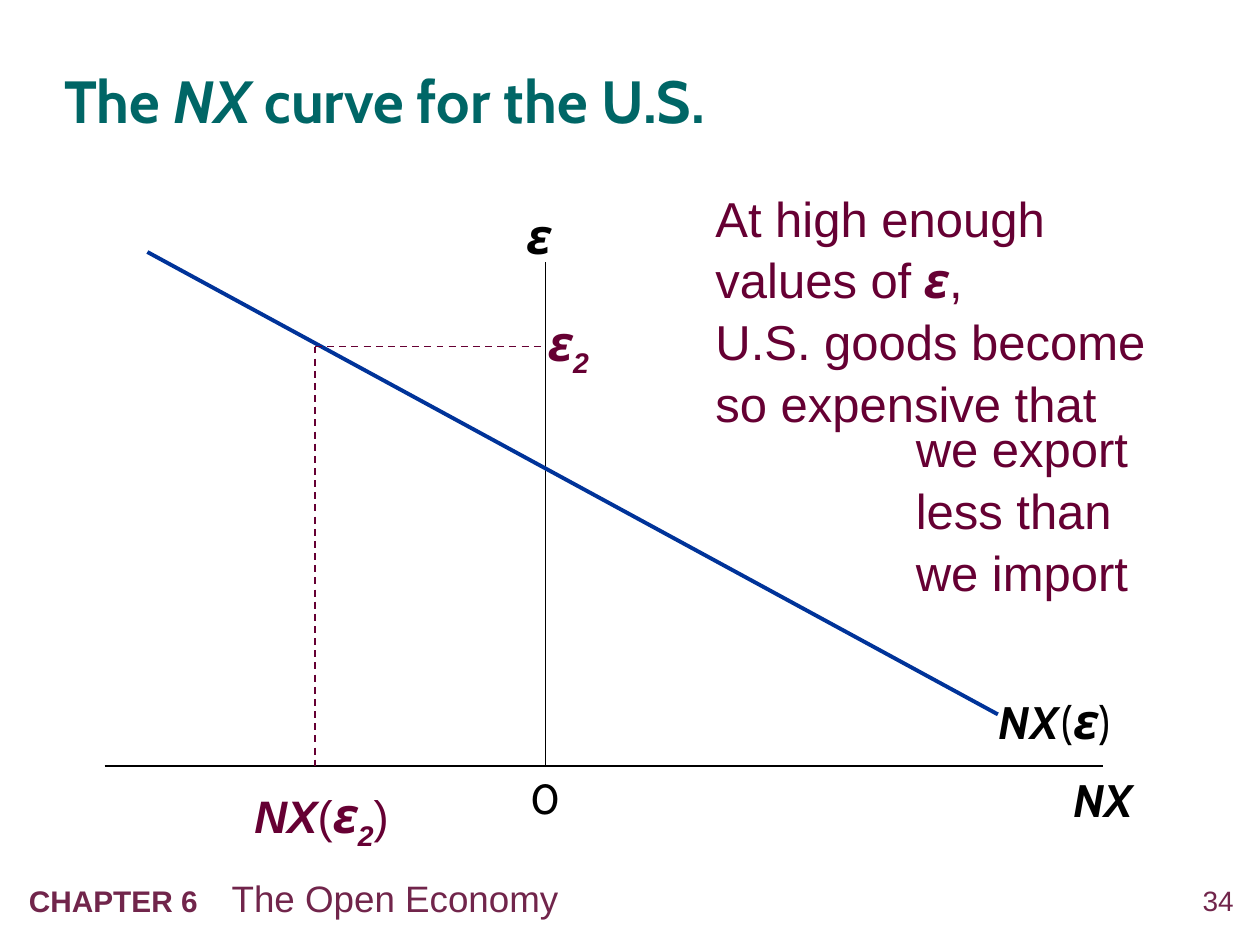
from lxml.etree import SubElement
from pptx import Presentation
from pptx.dml.color import RGBColor
from pptx.enum.dml import MSO_LINE
from pptx.enum.shapes import MSO_CONNECTOR
from pptx.enum.text import MSO_ANCHOR, MSO_AUTO_SIZE, PP_ALIGN
from pptx.oxml.ns import qn
from pptx.util import Inches, Pt

BLACK, PLUM, FOOTER, TEAL, BLUE = "000000", "660033", "71254B", "006666", "003399"

# Formats for the parts of the mathematical labels
VARIABLE = {"size": 26, "name": "Cabin", "bold": True, "italic": True}
EPSILON = {**VARIABLE, "size": 28}
BRACKET = {"size": 26, "name": "Cabin"}
BODY = {"size": 28, "name": "Arial"}
SUBSCRIPT = {**EPSILON, "name": "Arial", "baseline": -25}


def rgb(hex_color):
    return RGBColor.from_string(hex_color)


class DiagramSlide:
    def __init__(self, slide):
        self.slide = slide

    def add_runs(self, paragraph, runs, color):
        """Add (text, format) runs; a newline in a text becomes a line break."""
        for text, style in runs:
            for number, line in enumerate(text.split("\n")):
                if number:
                    paragraph.add_line_break()
                run = paragraph.add_run()
                run.text = line
                run.font.color.rgb = rgb(color)
                for key, value in style.items():
                    if key == "baseline":
                        run.font._element.set("baseline", str(value * 1000))
                    else:
                        setattr(run.font, key, Pt(value) if key == "size" else value)

    def title(self, box, runs, color):
        title = self.slide.shapes.title
        title.left, title.top, title.width, title.height = map(Inches, box)
        self.set_frame(title.text_frame, margin=0, vertical_anchor=MSO_ANCHOR.MIDDLE,
                       auto_size=MSO_AUTO_SIZE.NONE)
        paragraph = title.text_frame.paragraphs[0]
        paragraph.alignment = PP_ALIGN.LEFT
        paragraph.line_spacing = 1.05
        self.add_runs(paragraph, runs, color)

    def set_frame(self, frame, margin=None, **settings):
        frame.word_wrap = True
        if margin is not None:
            for side in ("left", "right", "top", "bottom"):
                settings[f"margin_{side}"] = Inches(margin)
        for key, value in settings.items():
            setattr(frame, key, value)

    def text(self, box, runs, color=BLACK, margin=None, tab=None, **paragraph_format):
        frame = self.slide.shapes.add_textbox(*map(Inches, box)).text_frame
        self.set_frame(frame, margin)
        paragraph = frame.paragraphs[0]
        for key, value in paragraph_format.items():
            setattr(paragraph, key, value)
        if tab is not None:
            stops = SubElement(paragraph._p.get_or_add_pPr(), qn("a:tabLst"))
            SubElement(stops, qn("a:tab"), pos=str(Inches(tab)), algn="l")
        self.add_runs(paragraph, runs, color)

    def line(self, start, end, color=BLACK, width=1, dash=None):
        connector = self.slide.shapes.add_connector(
            MSO_CONNECTOR.STRAIGHT, *map(Inches, start + end))
        connector.line.color.rgb = rgb(color)
        connector.line.width = Pt(width)
        if dash:
            connector.line.dash_style = dash
        SubElement(connector._element.spPr, qn("a:effectLst"))


def main():
    presentation = Presentation()
    presentation.slide_width, presentation.slide_height = Inches(10), Inches(7.5)
    layout = presentation.slide_layouts.get_by_name("Title Only")
    diagram = DiagramSlide(presentation.slides.add_slide(layout))

    heading = {"size": 34, "name": "Cabin", "bold": True, "italic": False}
    diagram.title((0.51, 0.26, 9.02, 1.03),
                  [("The ", heading), ("NX", {**heading, "italic": True}),
                   (" curve for the U.S.", heading)], TEAL)
    diagram.text((9.24, 7.01, 0.55, 0.32), [("34", {"size": 16, "name": "Arial"})],
                 FOOTER, margin=0, alignment=PP_ALIGN.RIGHT)
    diagram.text((0.13, 6.9, 8.18, 0.45),
                 [("CHAPTER 6", {"size": 17, "name": "Arial", "bold": True}),
                  ("\tThe Open Economy", {"size": 21, "name": "Arial"})],
                 FOOTER, tab=1.61)

    # Axes
    zero_x, axis_y = 4.33, 6.08
    diagram.line((0.83, axis_y), (8.75, axis_y))
    diagram.line((zero_x, 2.08), (zero_x, axis_y))
    diagram.text((4.11, axis_y, 0.5, 0.5), [("0", {"size": 24, "name": "Cabin"})])
    diagram.text((8.42, axis_y, 0.75, 0.53), [("NX", VARIABLE)])
    diagram.text((4.08, 1.58, 0.5, 0.57), [("ε", EPSILON)])

    # Net exports curve
    diagram.line((1.17, 2), (7.92, 5.67), BLUE, 2.25)
    diagram.text((7.83, 5.43, 1.25, 0.57),
                 [("NX", VARIABLE), (" ", {**VARIABLE, "size": 8}), ("(", BRACKET),
                  ("ε", EPSILON), (")", BRACKET)])

    # High exchange rate and the trade deficit it causes
    deficit_x, rate_y = 2.5, 2.75
    for end in ((zero_x, rate_y), (deficit_x, axis_y)):
        diagram.line((deficit_x, rate_y), end, PLUM, dash=MSO_LINE.DASH)
    rate = [("ε", EPSILON), ("2", SUBSCRIPT)]
    arial_bracket = {**BRACKET, "name": "Arial"}
    diagram.text((4.25, 2.43, 0.67, 0.57), rate, PLUM)
    diagram.text((1.92, 6.18, 1.5, 0.57),
                 [("NX", {**VARIABLE, "name": "Arial"}), ("(", arial_bracket),
                  *rate, (")", arial_bracket)], PLUM)

    # Explanation
    diagram.text((5.58, 1.42, 3.75, 1.97),
                 [("At high enough values of", BODY), (" ", {**BODY, "size": 26}),
                  ("ε", EPSILON),
                  (", \nU.S. goods become so expensive that", BODY)],
                 PLUM, line_spacing=1.05)
    diagram.text((7.17, 3.25, 2.25, 1.5), [("we export less than we import", BODY)],
                 PLUM, line_spacing=1.05)

    presentation.save("out.pptx")


if __name__ == "__main__":
    main()
